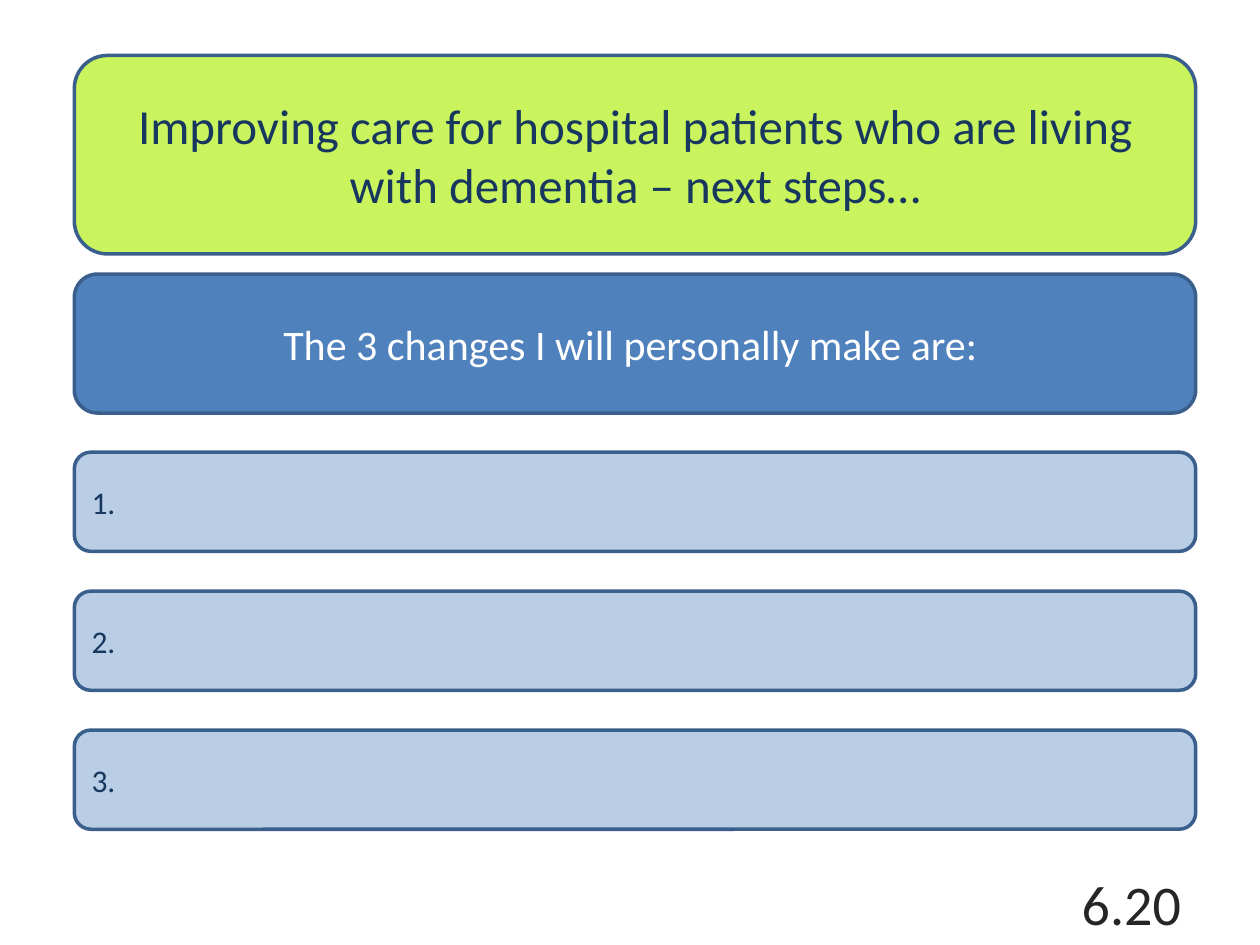
import pptx
import pptx.util
import pptx.dml.color
import pptx.enum.shapes
import pptx.enum.text

Pt = pptx.util.Pt
RGB = pptx.dml.color.RGBColor
ALIGN = pptx.enum.text.PP_ALIGN

LIME = RGB(0xC9, 0xF4, 0x5E)
BLUE = RGB(0x4F, 0x81, 0xBD)
PALE = RGB(0xB9, 0xCD, 0xE5)
EDGE = RGB(0x3A, 0x5F, 0x8C)
NAVY = RGB(0x17, 0x37, 0x5E)
WHITE = RGB(0xFF, 0xFF, 0xFF)
DARK = RGB(0x26, 0x26, 0x26)

LEFT, WIDTH = 42.5, 640.8


class Board:
    font = "Calibri"
    edge = 2

    def __init__(self, slide):
        self.slide = slide

    def letter(self, shape, text, size, color, align):
        frame = shape.text_frame
        frame.word_wrap = True
        frame.vertical_anchor = pptx.enum.text.MSO_ANCHOR.MIDDLE
        para = frame.paragraphs[0]
        para.alignment = align
        run = para.add_run()
        run.text = text
        style = {"name": self.font, "size": Pt(size)}
        for key, value in style.items():
            setattr(run.font, key, value)
        run.font.color.rgb = color

    def panel(self, top, height, fill, text, size, color, align=ALIGN.CENTER):
        kind = pptx.enum.shapes.MSO_SHAPE.ROUNDED_RECTANGLE
        box = self.slide.shapes.add_shape(
            kind, Pt(LEFT), Pt(top), Pt(WIDTH), Pt(height))
        box.shadow.inherit = False
        box.fill.solid()
        box.fill.fore_color.rgb = fill
        box.line.color.rgb = EDGE
        box.line.width = Pt(self.edge)
        self.letter(box, text, size, color, align)

    def label(self, left, top, width, height, text, size, color, align):
        box = self.slide.shapes.add_textbox(
            Pt(left), Pt(top), Pt(width), Pt(height))
        self.letter(box, text, size, color, align)


def main():
    deck = pptx.Presentation()
    deck.slide_width, deck.slide_height = Pt(720), Pt(540)
    board = Board(deck.slides.add_slide(deck.slide_layouts[6]))

    # Title and prompt
    board.panel(31.7, 113.4, LIME,
                "Improving care for hospital patients who are living "
                "with dementia – next steps…", 28, NAVY)
    board.panel(156.6, 79.4, BLUE,
                "The 3 changes I will personally make are: ", 24, WHITE)

    # Numbered answer rows
    for row in range(3):
        board.panel(258.4 + row * 79.4, 56.7, PALE,
                    f"{row + 1}.", 18, NAVY, ALIGN.LEFT)

    # Page number
    board.label(610, 492.5, 72, 47.5, "6.20", 32, DARK, ALIGN.RIGHT)

    deck.save("out.pptx")


if __name__ == "__main__":
    main()
